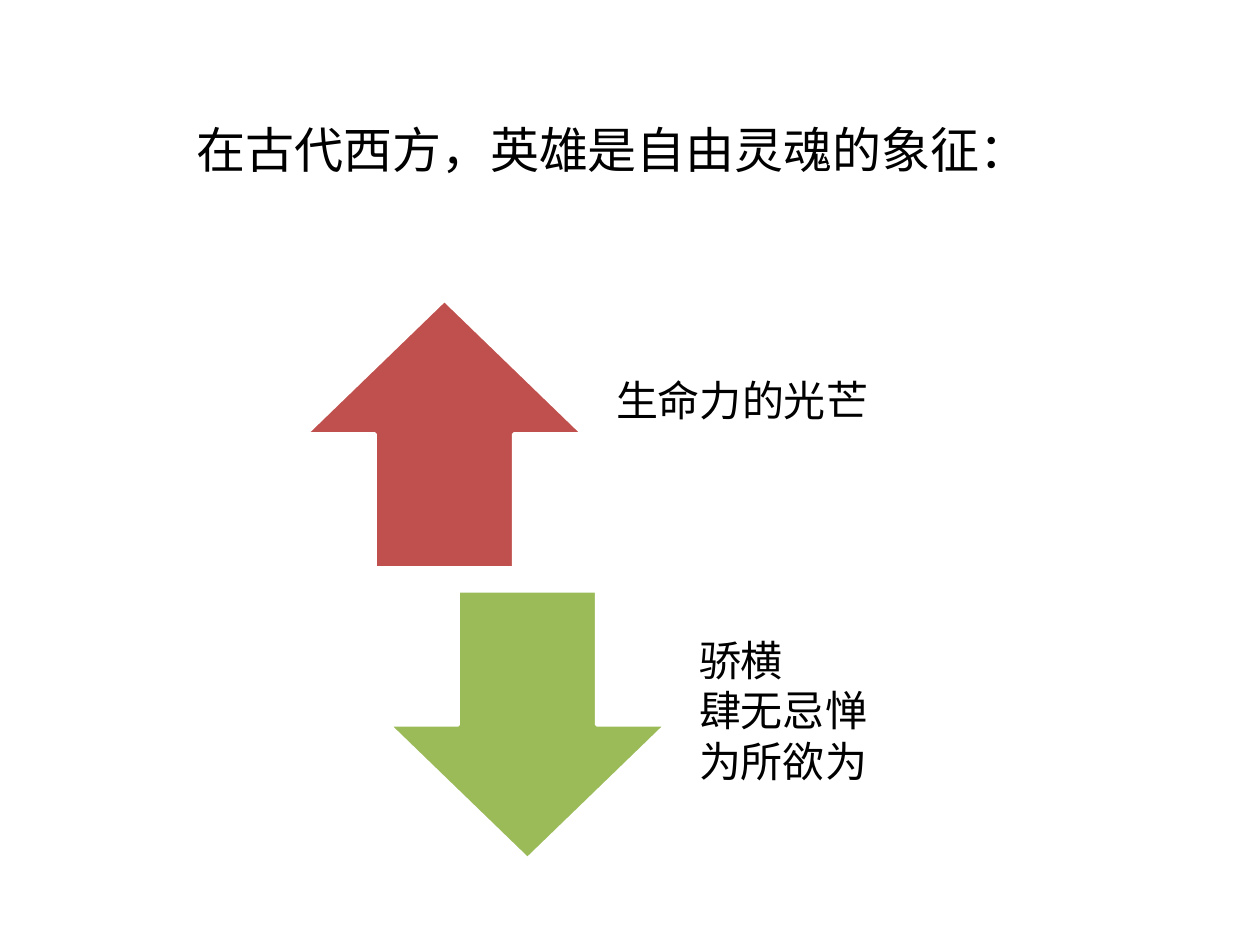
from lxml import etree
from pptx import Presentation
from pptx.dml.color import RGBColor
from pptx.enum.shapes import MSO_SHAPE
from pptx.enum.text import MSO_ANCHOR, MSO_AUTO_SIZE, PP_ALIGN
from pptx.oxml.ns import qn
from pptx.util import Pt

PX = 914400 // 126
FONT = "Noto Sans CJK SC"
BLACK = RGBColor(0x00, 0x00, 0x00)
WHITE = RGBColor(0xFF, 0xFF, 0xFF)
RED = RGBColor(0xC0, 0x50, 0x4D)
GREEN = RGBColor(0x9B, 0xBB, 0x59)
UP, DOWN = MSO_SHAPE.UP_ARROW, MSO_SHAPE.DOWN_ARROW
MIDDLE = MSO_ANCHOR.MIDDLE
LEFT = PP_ALIGN.LEFT
NO_FIT = MSO_AUTO_SIZE.NONE


def place(shape, left, top, width, height):
    shape.left, shape.top = left * PX, top * PX
    shape.width, shape.height = width * PX, height * PX


def write(shape, text, size):
    frame = shape.text_frame
    frame.text = text
    frame.word_wrap = True
    frame.auto_size = NO_FIT
    frame.vertical_anchor = MIDDLE
    for paragraph in frame.paragraphs:
        paragraph.alignment = LEFT
        paragraph.space_before = Pt(0)
        for run in paragraph.runs:
            run.font.name = FONT
            run.font.size = Pt(size)
            run.font.color.rgb = BLACK
            # East Asian text takes its own font element
            east_asian = etree.Element(qn("a:ea"), typeface=FONT)
            run.font._element.find(qn("a:latin")).addnext(east_asian)


prs = Presentation()
prs.slide_width, prs.slide_height = 1260 * PX, 945 * PX
slide = prs.slides.add_slide(prs.slide_layouts[3])
heading, light_side, dark_side = slide.placeholders

# Heading
place(heading, 184, 113, 963, 72)
write(heading, "在古代西方，英雄是自由灵魂的象征：", 28)

# Two sides of the hero: arrow, with its traits to the right
ARROW_WIDTH, ARROW_HEIGHT = 277, 268
TRAITS_OFFSET, TRAITS_WIDTH = 286, 470
sides = [
    (light_side, UP, RED, 306, 300, 62, "生命力的光芒"),
    (dark_side, DOWN, GREEN, 389, 591, 24, "骄横\n肆无忌惮\n为所欲为"),
]
for traits, direction, color, left, top, bottom_inset, text in sides:
    arrow = slide.shapes.add_shape(
        direction, left * PX, top * PX, ARROW_WIDTH * PX, ARROW_HEIGHT * PX)
    arrow.shadow.inherit = False
    arrow.fill.solid()
    arrow.fill.fore_color.rgb = color
    arrow.line.color.rgb = WHITE
    arrow.line.width = Pt(2)

    place(traits, left + TRAITS_OFFSET, top, TRAITS_WIDTH, ARROW_HEIGHT)
    write(traits, text, 24)
    frame = traits.text_frame
    frame.margin_left = frame.margin_right = 24 * PX
    frame.margin_top, frame.margin_bottom = 0, bottom_inset * PX
    for paragraph in frame.paragraphs:
        paragraph.line_spacing = 0.9
        paragraph.space_after = Pt(3)
        # No bullet and no hanging indent
        properties = paragraph._p.get_or_add_pPr()
        properties.set("marL", "0")
        properties.set("indent", "0")
        etree.SubElement(properties, qn("a:buNone"))

prs.save("out.pptx")
